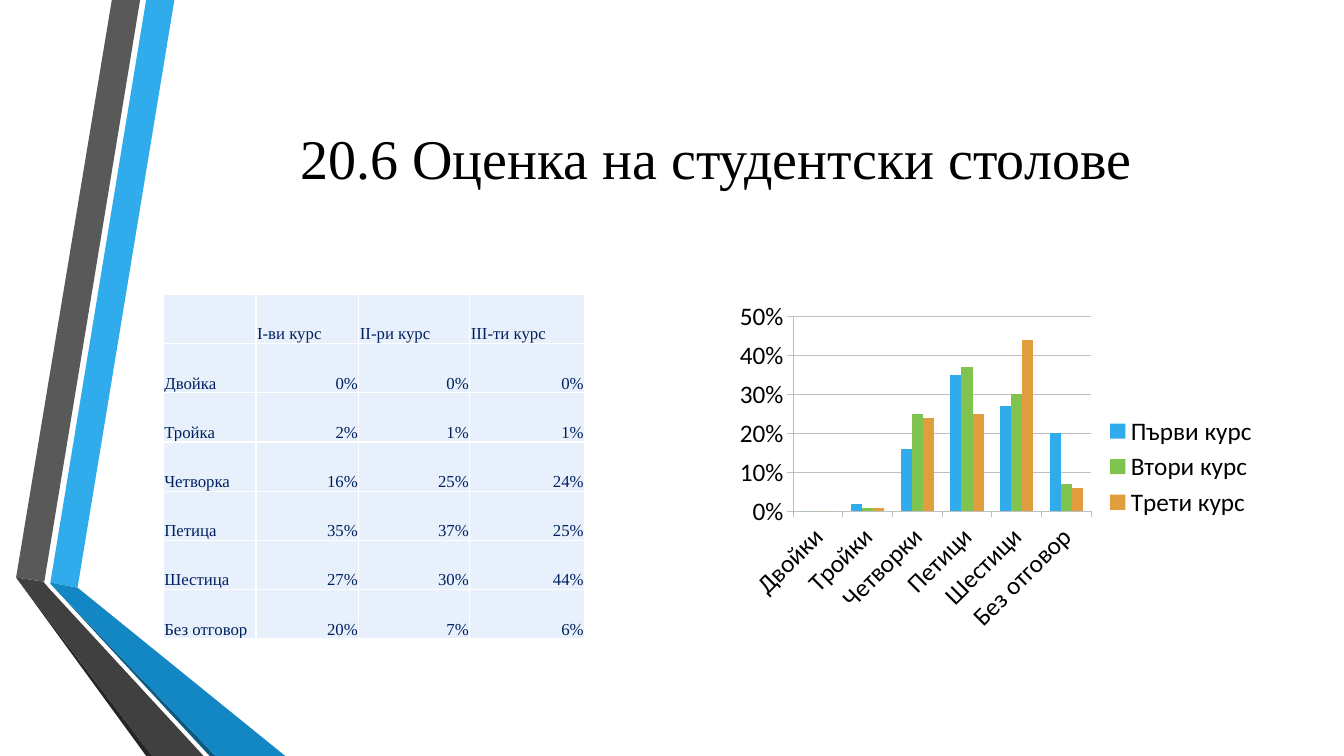
from dataclasses import dataclass

from lxml import etree
from pptx import Presentation
from pptx.chart.data import CategoryChartData
from pptx.dml.color import RGBColor
from pptx.enum.chart import XL_CHART_TYPE, XL_LEGEND_POSITION, XL_TICK_MARK
from pptx.enum.text import MSO_ANCHOR, PP_ALIGN
from pptx.oxml.ns import qn
from pptx.util import Inches, Pt

COLUMNS = XL_CHART_TYPE.COLUMN_CLUSTERED
LEGEND_RIGHT = XL_LEGEND_POSITION.RIGHT
TICK_OUT, TICK_NONE = XL_TICK_MARK.OUTSIDE, XL_TICK_MARK.NONE
MIDDLE, BOTTOM = MSO_ANCHOR.MIDDLE, MSO_ANCHOR.BOTTOM
LEFT, CENTER, RIGHT = PP_ALIGN.LEFT, PP_ALIGN.CENTER, PP_ALIGN.RIGHT


@dataclass(frozen=True)
class Theme:
    serif: str = "Times New Roman"
    sans: str = "Calibri"
    title_size: int = 40
    table_size: int = 12
    chart_size: int = 18
    black: str = "000000"
    navy: str = "002060"
    white: str = "FFFFFF"
    cell: str = "E8F1FB"
    grid: str = "BFBFBF"
    blue: str = "30ACEC"
    blue_mid: str = "1287C3"
    blue_dark: str = "0C5A82"
    green: str = "80C34F"
    orange: str = "E29D3E"
    gray: str = "595959"
    gray_mid: str = "404040"
    gray_dark: str = "262626"


theme = Theme()


def set_font(font, name, size, color):
    font.name, font.size = name, Pt(size)
    font.color.rgb = RGBColor.from_string(color)


def add_text(tf, text, align, name, size, color):
    p = tf.paragraphs[0]
    p.alignment = align
    r = p.add_run()
    r.text = text
    set_font(r.font, name, size, color)


prs = Presentation()
prs.slide_width, prs.slide_height = Inches(13.33), Inches(7.5)
s = prs.slides.add_slide(prs.slide_layouts[5])

# Folded ribbons on the left edge
ribbons = [
    (theme.blue, [(0.5, 5.78), (0.77, 5.83), (1.73, 0), (1.45, 0)]),
    (theme.gray, [(1.39, 0), (1.11, 0), (0.16, 5.73), (0.44, 5.77)]),
    (theme.gray_dark, [(0.16, 5.73), (1.45, 7.5), (1.51, 7.5)]),
    (theme.blue_dark, [(0.5, 5.79), (2.08, 7.5), (2.14, 7.5)]),
    (theme.blue_mid, [(0.5, 5.78), (0.5, 5.79), (2.14, 7.5), (2.83, 7.5), (0.77, 5.83)]),
    (theme.gray_mid, [(2.02, 7.5), (0.48, 5.83), (0.43, 5.77), (0.16, 5.73), (1.51, 7.5)]),
]
for color, points in ribbons:
    corners = [(Inches(x), Inches(y)) for x, y in points]
    builder = s.shapes.build_freeform(*corners[0])
    builder.add_line_segments(corners[1:], close=True)
    sp = builder.convert_to_shape()
    sp.shadow.inherit = False
    sp.fill.solid()
    sp.fill.fore_color.rgb = RGBColor.from_string(color)
    sp.line.fill.background()

# Title
title = s.shapes.title
title.left, title.top = Inches(1.62), Inches(0.75)
title.width, title.height = Inches(10.96), Inches(1.62)
title.text_frame.vertical_anchor = MIDDLE
add_text(title.text_frame, "20.6 Оценка на студентски столове", CENTER,
         theme.serif, theme.title_size, theme.black)

# Survey results, in percent
years = [
    ("I-ви курс", "Първи курс", theme.blue, [0, 2, 16, 35, 27, 20]),
    ("II-ри курс", "Втори курс", theme.green, [0, 1, 25, 37, 30, 7]),
    ("III-ти курс", "Трети курс", theme.orange, [0, 1, 24, 25, 44, 6]),
]
grades = ["Двойка", "Тройка", "Четворка", "Петица", "Шестица", "Без отговор"]
rows = [[""] + [year[0] for year in years]]
for i, grade in enumerate(grades):
    rows.append([grade] + [f"{year[3][i]}%" for year in years])

# Table
table = s.shapes.add_table(len(rows), len(rows[0]), Inches(1.62), Inches(2.92),
                           Inches(4.18), Inches(3.42)).table
table.first_row = table.horz_banding = False
for column, width in zip(table.columns, [0.92, 1.02, 1.1, 1.14]):
    column.width = Inches(width)
for i, row in enumerate(rows):
    table.rows[i].height = Inches(3.42 / len(rows))
    for j, text in enumerate(row):
        cell = table.cell(i, j)
        cell.vertical_anchor = BOTTOM
        cell.margin_left = cell.margin_right = cell.margin_top = Inches(0.01)
        cell.margin_bottom = 0
        cell.fill.solid()
        cell.fill.fore_color.rgb = RGBColor.from_string(theme.cell)
        if text:
            add_text(cell.text_frame, text, RIGHT if i and j else LEFT,
                     theme.serif, theme.table_size, theme.navy)
        # Cell borders go before the fill
        tc_pr = cell._tc.get_or_add_tcPr()
        for k, side in enumerate(["a:lnL", "a:lnR", "a:lnT", "a:lnB"]):
            ln = etree.Element(qn(side), w=str(Pt(1)))
            fill = etree.SubElement(ln, qn("a:solidFill"))
            etree.SubElement(fill, qn("a:srgbClr"), val=theme.white)
            tc_pr.insert(k, ln)

# Chart
data = CategoryChartData(number_format="0%")
data.categories = ["Двойки", "Тройки", "Четворки", "Петици", "Шестици", "Без отговор"]
for _, name, _, percents in years:
    data.add_series(name, [percent / 100 for percent in percents])
chart = s.shapes.add_chart(COLUMNS, Inches(7.23), Inches(2.92),
                           Inches(5.35), Inches(3.42), data).chart
set_font(chart.font, theme.sans, theme.chart_size, theme.black)
chart.has_title = False
chart.has_legend = True
chart.legend.position = LEGEND_RIGHT
chart.legend.include_in_layout = False

plot = chart.plots[0]
plot.gap_width, plot.overlap = 150, 0
plot.vary_by_categories = False
for series, year in zip(plot.series, years):
    series.format.fill.solid()
    series.format.fill.fore_color.rgb = RGBColor.from_string(year[2])

value_axis = chart.value_axis
value_axis.has_major_gridlines = True
value_axis.minimum_scale, value_axis.maximum_scale = 0, 0.5
value_axis.major_unit = 0.1
value_axis.tick_labels.number_format = "0%"
value_axis.tick_labels.number_format_is_linked = False
for axis in (chart.category_axis, value_axis):
    axis.major_tick_mark, axis.minor_tick_mark = TICK_OUT, TICK_NONE
for lines in (chart.category_axis, value_axis, value_axis.major_gridlines):
    lines.format.line.width = Pt(0.75)
    lines.format.line.color.rgb = RGBColor.from_string(theme.grid)

prs.save("out.pptx")
